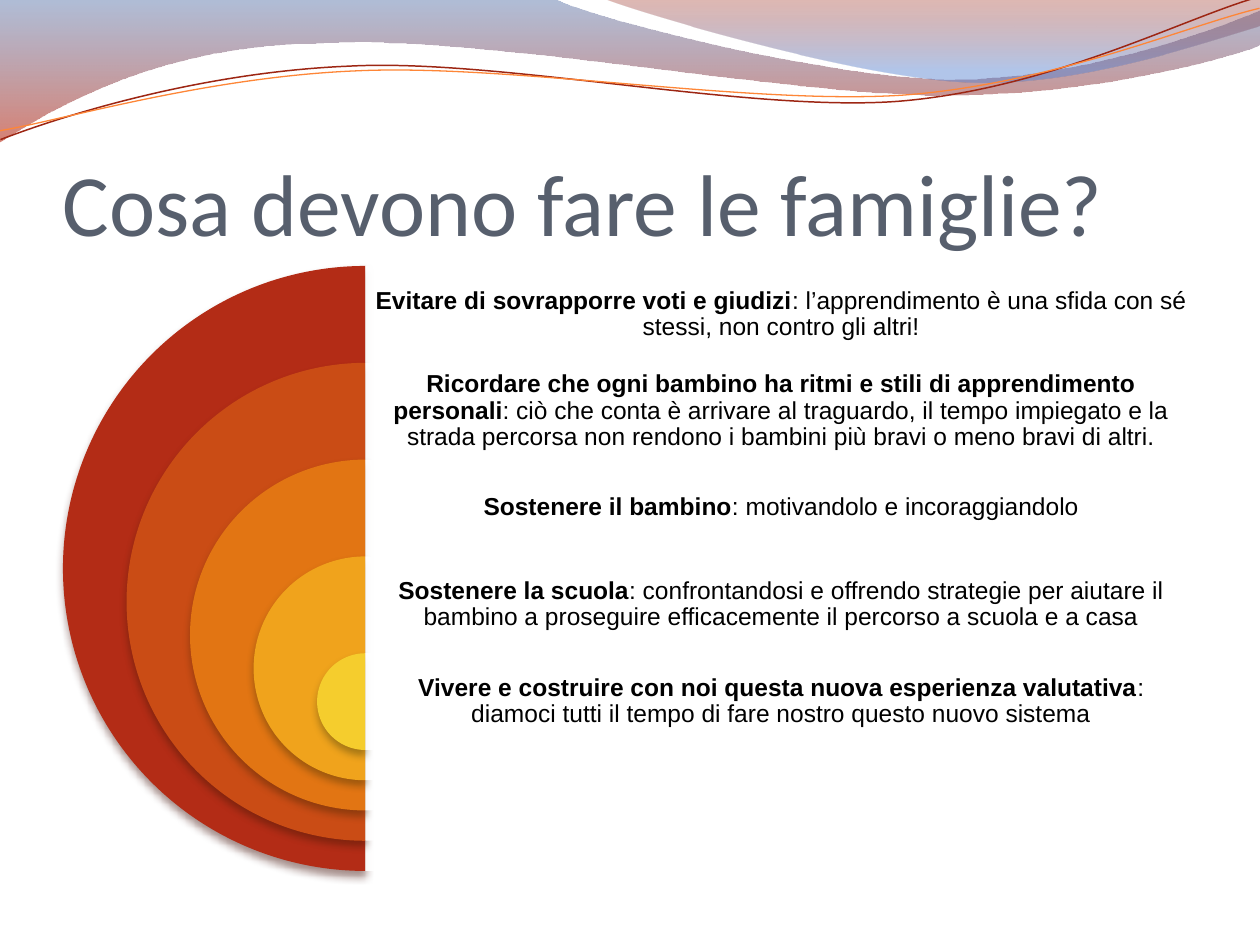
import pptx
import pptx.util
import pptx.dml.color
import pptx.enum.shapes
import pptx.enum.text
import pptx.oxml
import pptx.oxml.ns
from dataclasses import dataclass
from lxml import etree

PX = 914400 / 126  # EMU in one px
SHAPE = pptx.enum.shapes.MSO_SHAPE
ANCHOR = pptx.enum.text.MSO_ANCHOR
qn = pptx.oxml.ns.qn


@dataclass(frozen=True)
class Theme:
    title_font: str = "Calibri"
    body_font: str = "Arial"
    title_size: int = 50
    body_size: int = 14
    title: str = "575F6D"
    body: str = "000000"
    panel: str = "FFFFFF"
    panel_alpha: int = 90
    # ring fill, ring shadow
    rings: tuple = (("B32C16", "400E06"), ("CA4C15", "491A06"),
                    ("E27513", "512905"), ("F0A31C", "563A08"),
                    ("F5CD2D", "58490E"))
    # (position, colour, opacity) stops
    wave_left: tuple = ((0, "4F6EA7", 45), (1, "B51900", 55))
    wave_right: tuple = ((0.2, "5581D1", 45), (1, "941400", 30))
    line_dark: str = "9D2613"
    line_light: str = "FE8637"


THEME = Theme()
LINE_TURN = -2.7  # degrees

# Start point, then one point for a straight line or three for a cubic curve
WAVE_LEFT = [[(0, 0)], [(554, -1)],
             [(600, 21), (837, 79), (955, 79)],
             [(1075, 79), (1207, 33), (1260, 11)], [(1261, 45)],
             [(1239, 55), (1096, 96), (940, 95)],
             [(784, 95), (481, 35), (324, 43)],
             [(163, 44), (58, 105), (-1, 142)], [(0, 0)]]
WAVE_RIGHT = [[(604, -1)], [(641, 14), (859, 78), (969, 82)],
              [(1079, 87), (1211, 40), (1260, 26)], [(1260, 0)], [(604, -1)]]
LINE_DARK = [[(-2, 110)], [(58, 90), (199, 52), (350, 53)],
             [(499, 52), (745, 118), (896, 114)],
             [(1049, 109), (1184, 45), (1260, 27)]]
LINE_LIGHT = [[(-2, 101)], [(58, 94), (207, 57), (357, 58)],
              [(509, 58), (750, 111), (902, 108)],
              [(1052, 104), (1188, 52), (1262, 38)]]

ADVICE = [
    ("Evitare di sovrapporre voti e giudizi",
     ": l’apprendimento è una sfida con sé stessi, non contro gli altri!"),
    ("Ricordare che ogni bambino ha ritmi e stili di apprendimento personali",
     ": ciò che conta è arrivare al traguardo, il tempo impiegato e la strada "
     "percorsa non rendono i bambini più bravi o meno bravi di altri."),
    ("Sostenere il bambino", ": motivandolo e incoraggiandolo"),
    ("Sostenere la scuola",
     ": confrontandosi e offrendo strategie per aiutare il bambino a "
     "proseguire efficacemente il percorso a scuola e a casa"),
    ("Vivere e costruire con noi questa nuova esperienza valutativa",
     ": diamoci tutti il tempo di fare nostro questo nuovo sistema"),
]


def px(n):
    return pptx.util.Emu(round(n * PX))


def rgb(value):
    return pptx.dml.color.RGBColor.from_string(value)


def set_alphas(sp, alphas):
    colours = sp._element.spPr.iter(qn("a:srgbClr"))
    for clr, alpha in zip(list(colours), alphas):
        etree.SubElement(clr, qn("a:alpha")).set("val", str(alpha * 1000))


def add_shadow(sp, colour):
    sp._element.spPr.append(pptx.oxml.parse_xml(
        f'<a:effectLst {pptx.oxml.ns.nsdecls("a")}>'
        '<a:outerShdw blurRad="57150" dist="38100" dir="5400000" '
        f'algn="ctr" rotWithShape="0"><a:srgbClr val="{colour}">'
        '<a:alpha val="48000"/></a:srgbClr></a:outerShdw></a:effectLst>'))


def add_shape(s, kind, box, colour):
    sp = s.shapes.add_shape(kind, *map(px, box))
    sp.fill.solid()
    sp.fill.fore_color.rgb = rgb(colour)
    sp.line.fill.background()
    return sp


def add_text(s, box, runs, anchor, insets):
    """Add a text box of (text, format) runs and return its paragraph."""
    tf = s.shapes.add_textbox(*map(px, box)).text_frame
    tf.word_wrap = True
    tf.vertical_anchor = anchor
    for side, inset in zip(("left", "top", "right", "bottom"), insets):
        setattr(tf, f"margin_{side}", px(inset))
    p = tf.paragraphs[0]
    for text, fmt in runs:
        r = p.add_run()
        r.text = text
        r.font.color.rgb = rgb(fmt["colour"])
        for name in ("name", "size", "bold"):
            setattr(r.font, name, fmt[name])
    return p


def add_curve(s, origin, outline, close=False):
    """Draw an outline, turning each step of three points into a cubic curve."""
    points = [(px(origin[0] + x), px(origin[1] + y))
              for step in outline for x, y in step]
    builder = s.shapes.build_freeform(*points[0], scale=1.0)
    builder.add_line_segments(points[1:], close=close)
    sp = builder.convert_to_shape()
    sp.shadow.inherit = False
    lines = iter(list(sp._element.spPr.iter(qn("a:lnTo"))))
    for step in outline[1:]:
        parts = [next(lines) for _ in step]
        if len(parts) == 3:
            curve = etree.Element(qn("a:cubicBezTo"))
            parts[0].addprevious(curve)
            for part in parts:
                curve.append(part[0])
                part.getparent().remove(part)
    return sp


def add_waves(s, box):
    # Gradient waves
    for outline, stops, angle in ((WAVE_LEFT, THEME.wave_left, 270),
                                  (WAVE_RIGHT, THEME.wave_right, 90)):
        sp = add_curve(s, box[:2], outline, close=True)
        sp.line.fill.background()
        sp.fill.gradient()
        sp.fill.gradient_angle = angle
        for stop, (position, colour, _) in zip(sp.fill.gradient_stops, stops):
            stop.position = position
            stop.color.rgb = rgb(colour)
        set_alphas(sp, [alpha for _, _, alpha in stops])
    # Thin lines
    for outline, colour, width in ((LINE_DARK, THEME.line_dark, 0.85),
                                   (LINE_LIGHT, THEME.line_light, 0.75)):
        sp = add_curve(s, box[:2], outline)
        sp.rotation = LINE_TURN
        sp.fill.background()
        sp.line.color.rgb = rgb(colour)
        sp.line.width = pptx.util.Pt(width)


def add_title(s, box, text):
    fmt = dict(name=THEME.title_font, size=pptx.util.Pt(THEME.title_size),
               bold=False, colour=THEME.title)
    add_text(s, box, [(text, fmt)], ANCHOR.BOTTOM, (0, 6, 0, 0))


def add_target(s, box, advice):
    """Nested half discs on the left, one line of advice beside each."""
    left, top, width, height = box
    centre = left + height / 2
    text_width = left + width - centre
    band = 0.16 * height
    fmt = dict(name=THEME.body_font, size=pptx.util.Pt(THEME.body_size),
               colour=THEME.body)
    for i, ((lead, rest), (fill, shade)) in enumerate(zip(advice, THEME.rings)):
        y = top + i * band
        d = height * (1 - 0.21 * i)
        # Half disc
        disc = add_shape(s, SHAPE.PIE, (centre - d / 2, y, d, d), fill)
        disc.adjustments[0], disc.adjustments[1] = 54, 162
        add_shadow(disc, shade)
        # Pale panel
        panel = add_shape(s, SHAPE.RECTANGLE, (centre, y, text_width, d),
                          THEME.panel)
        panel.shadow.inherit = False
        set_alphas(panel, [THEME.panel_alpha])
        # Advice
        p = add_text(s, (centre, y, text_width, band),
                     [(lead, dict(fmt, bold=True)), (rest, dict(fmt, bold=False))],
                     ANCHOR.MIDDLE, (8, 8, 8, 8))
        p.alignment = pptx.enum.text.PP_ALIGN.CENTER
        p.line_spacing = 0.9


def main():
    prs = pptx.Presentation()
    prs.slide_width, prs.slide_height = px(1260), px(945)
    s = prs.slides.add_slide(prs.slide_layouts[6])
    add_waves(s, (0, 0, 1260, 142))
    add_title(s, (63, 96, 1134, 158), "Cosa devono fare le famiglie?")
    add_target(s, (63, 266, 1134, 605), ADVICE)
    prs.save("out.pptx")


if __name__ == "__main__":
    main()
